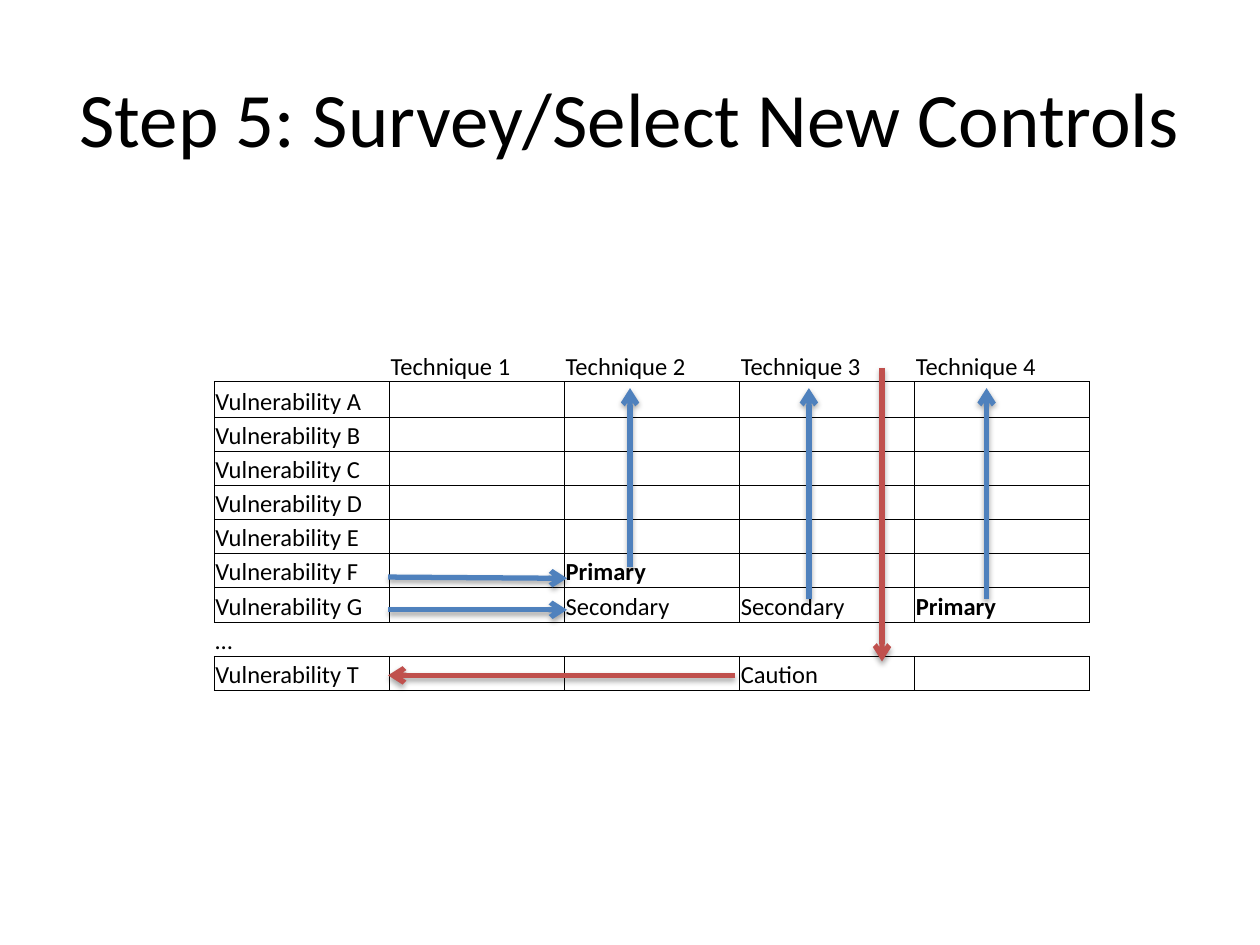
from dataclasses import dataclass

from lxml import etree
from pptx import Presentation
from pptx.dml.color import RGBColor
from pptx.enum import shapes, text
from pptx.oxml import ns
from pptx.util import Inches, Pt


@dataclass(frozen=True)
class Theme:
    font: str = "Calibri"
    title_size: int = 44
    cell_size: int = 14
    ink: str = "000000"
    blue: str = "4F81BD"
    red: str = "C0504D"
    grid_width: float = 0.5
    arrow_width: float = 3


theme = Theme()


def add_xml(parent, tag, **attributes):
    values = {name: str(value) for name, value in attributes.items()}
    return etree.SubElement(parent, ns.qn(tag), values)


def style_font(font, size, bold=False):
    font.name = theme.font
    font.size = Pt(size)
    font.bold = bold
    font.color.rgb = RGBColor.from_string(theme.ink)


deck = Presentation()
deck.slide_width, deck.slide_height = Inches(10), Inches(7.5)
page = deck.slides.add_slide(deck.slide_layouts[5])

# Title
title = page.shapes.title
title.left, title.top = Inches(0.5), Inches(0.3)
title.width, title.height = Inches(9), Inches(1.25)
title.text_frame.text = "Step 5: Survey/Select New Controls"
title.text_frame.vertical_anchor = text.MSO_ANCHOR.MIDDLE
para = title.text_frame.paragraphs[0]
para.alignment = text.PP_ALIGN.CENTER
style_font(para.runs[0].font, theme.title_size)

# Table content: techniques across, vulnerabilities down
header = [""] + [f"Technique {number}" for number in range(1, 5)]
labels = [f"Vulnerability {letter}" for letter in "ABCDEFG"] + ["…", "Vulnerability T"]
ratings = {
    (6, 2): "Primary",
    (7, 2): "Secondary",
    (7, 3): "Secondary",
    (7, 4): "Primary",
    (9, 3): "Caution",
}
row_heights = [0.28, 0.28, 0.27, 0.27, 0.27, 0.27, 0.27, 0.28, 0.27, 0.27]
open_rows = {0: ["b"], 8: ["t", "b"]}
all_sides = ["l", "r", "t", "b"]

frame = page.shapes.add_table(
    len(row_heights), len(header),
    Inches(1.7), Inches(2.75), Inches(6.95), Inches(sum(row_heights)),
)
table = frame.table
table.first_row = table.horz_banding = False
for column in table.columns:
    column.width = Inches(1.39)

for row, height in enumerate(row_heights):
    table.rows[row].height = Inches(height)
    for col, heading in enumerate(header):
        cell = table.cell(row, col)
        if row == 0:
            words = heading
        elif col == 0:
            words = labels[row - 1]
        else:
            words = ratings.get((row, col), "")
        cell.margin_left = cell.margin_right = cell.margin_top = Inches(0.01)
        cell.margin_bottom = 0
        cell.vertical_anchor = text.MSO_ANCHOR.BOTTOM
        para = cell.text_frame.paragraphs[0]
        if words:
            para.text = words
            style_font(para.runs[0].font, theme.cell_size, words == "Primary")
        else:
            add_xml(para._p, "a:endParaRPr", sz=theme.cell_size * 100)

        # Borders come before the fill in the cell properties
        properties = cell._tc.get_or_add_tcPr()
        for side in all_sides:
            drawn = side in open_rows.get(row, all_sides)
            border = add_xml(properties, f"a:ln{side.upper()}", w=Pt(theme.grid_width))
            if drawn:
                paint = add_xml(border, "a:solidFill")
                add_xml(paint, "a:srgbClr", val=theme.ink)
            else:
                add_xml(border, "a:noFill")
        cell.fill.background()

# Arrows: start, end, colour
arrows = [
    ((5, 4.5), (5, 3.08), theme.blue),
    ((3.08, 4.58), (4.5, 4.59), theme.blue),
    ((3.08, 4.84), (4.5, 4.84), theme.blue),
    ((6.42, 4.75), (6.42, 3.08), theme.blue),
    ((7.83, 4.75), (7.83, 3.08), theme.blue),
    ((7, 2.92), (7, 5.25), theme.red),
    ((5.83, 5.36), (3.08, 5.36), theme.red),
]
for start, end, colour in arrows:
    arrow = page.shapes.add_connector(
        shapes.MSO_CONNECTOR.STRAIGHT, *map(Inches, start + end)
    )
    arrow.line.color.rgb = RGBColor.from_string(colour)
    arrow.line.width = Pt(theme.arrow_width)
    add_xml(arrow.line._get_or_add_ln(), "a:tailEnd", type="arrow")
    # Soft shadow straight below the line
    effects = add_xml(arrow._element.spPr, "a:effectLst")
    shadow = add_xml(
        effects, "a:outerShdw",
        blurRad=Pt(3.1), dist=Pt(1.8), dir=90 * 60000, rotWithShape=0,
    )
    shade = add_xml(shadow, "a:srgbClr", val=theme.ink)
    add_xml(shade, "a:alpha", val=35000)

deck.save("out.pptx")
